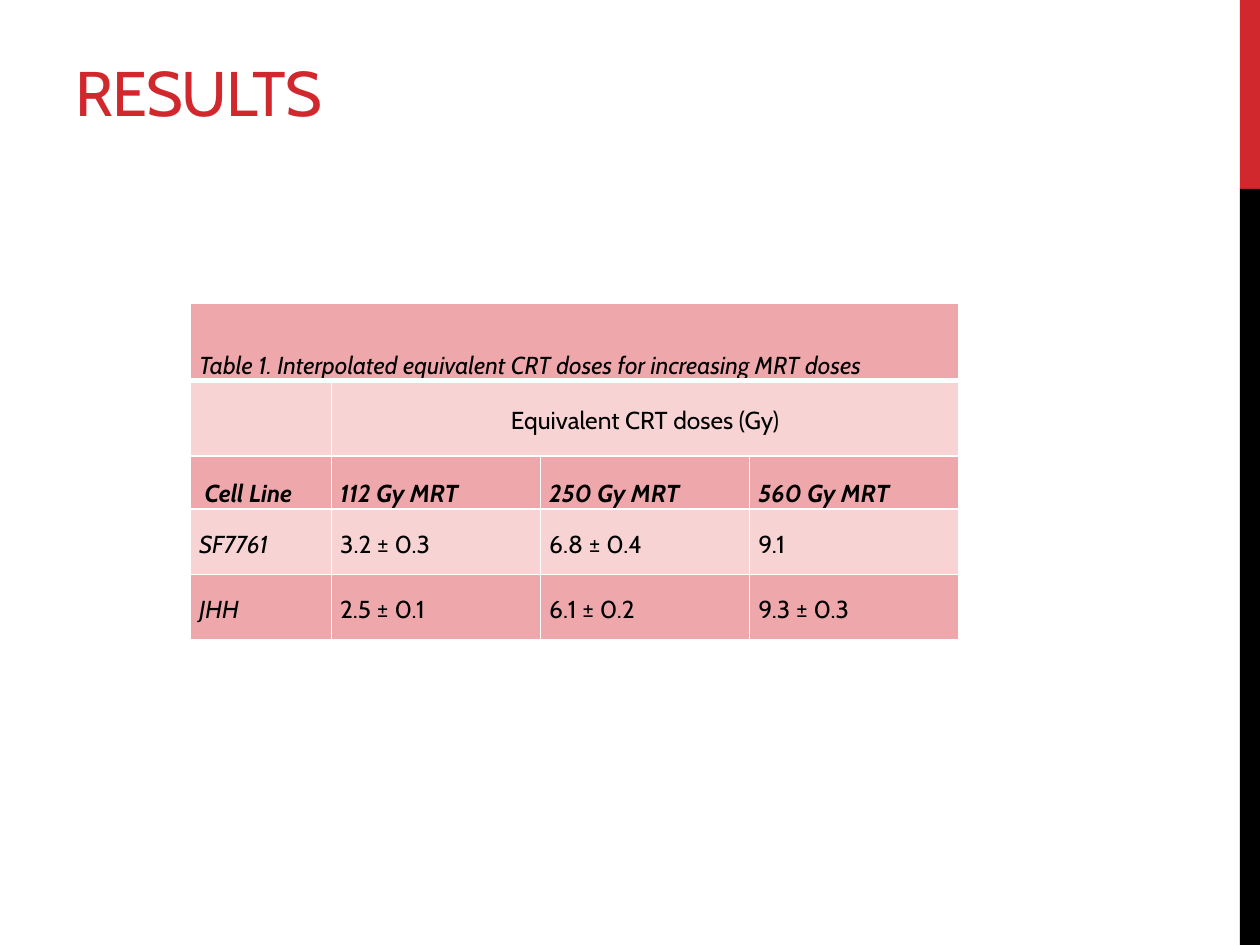
"""Build the results slide with its table of equivalent CRT doses."""
import pptx
import pptx.dml.color
import pptx.enum.shapes
import pptx.enum.text
import pptx.oxml
import pptx.oxml.ns
import pptx.util

Inches = pptx.util.Inches
Pt = pptx.util.Pt
ANCHOR = pptx.enum.text.MSO_ANCHOR
FONT = "Cabin"
COLORS = {
    "red": "D1282E",
    "black": "000000",
    "white": "FFFFFF",
    "dark_band": "EEA7AA",
    "light_band": "F7D3D4",
}
COL_WIDTHS = [1.12, 1.66, 1.66, 1.66]
ROW_HEIGHTS = [0.61, 0.6, 0.42, 0.52, 0.52]
CAPTION = "Table 1. Interpolated equivalent CRT doses for increasing MRT doses"
DOSES = [
    [" Cell Line", "112 Gy MRT", "250 Gy MRT", "560 Gy MRT"],
    ["SF7761", "3.2 ± 0.3", "6.8 ± 0.4", "9.1"],
    ["JHH", "2.5 ± 0.1", "6.1 ± 0.2", "9.3 ± 0.3"],
]


def rgb(name):
    return pptx.dml.color.RGBColor.from_string(COLORS[name])


def style_run(r, size, color, bold=False, italic=False):
    r.font.name = FONT
    r.font.size = Pt(size)
    r.font.color.rgb = rgb(color)
    r.font.bold = bold
    r.font.italic = italic


def add_bar(s, top, height, color):
    sp = s.shapes.add_shape(
        pptx.enum.shapes.MSO_SHAPE.RECTANGLE,
        Inches(9.84), Inches(top), Inches(0.16), Inches(height))
    sp.shadow.inherit = False
    sp.fill.solid()
    sp.fill.fore_color.rgb = rgb(color)
    sp.line.fill.background()


def add_title(s, text):
    sp = s.shapes.add_textbox(Inches(0.5), Inches(0.32), Inches(6.33), Inches(0.75))
    tf = sp.text_frame
    tf.text = text
    tf.word_wrap = True
    tf.vertical_anchor = ANCHOR.BOTTOM
    r = tf.paragraphs[0].runs[0]
    style_run(r, 36, "red")
    r.font._element.set("spc", "-60")


def style_cell(cell, row):
    tc_pr = cell._tc.get_or_add_tcPr()
    widths = {"L": 1, "R": 1, "T": 3 if row == 1 else 1, "B": 3 if row == 0 else 1}
    for side, width in widths.items():
        tc_pr.append(pptx.oxml.parse_xml(
            f'<a:ln{side} {pptx.oxml.ns.nsdecls("a")} w="{Pt(width)}"><a:solidFill>'
            f'<a:srgbClr val="{COLORS["white"]}"/></a:solidFill></a:ln{side}>'))
    cell.fill.solid()
    cell.fill.fore_color.rgb = rgb("light_band" if row % 2 else "dark_band")
    cell.margin_left = cell.margin_right = Inches(0.07)
    cell.margin_top = Inches(0.01)
    cell.margin_bottom = 0


def set_cell_text(cell, text, anchor, before=0, after=0, bold=False, italic=False):
    cell.vertical_anchor = anchor
    p = cell.text_frame.paragraphs[0]
    p.text = text
    p.line_spacing = 1.15
    p.space_before = Pt(before)
    p.space_after = Pt(after)
    style_run(p.runs[0], 14, "black", bold, italic)
    return p


def add_dose_table(s):
    frame = s.shapes.add_table(
        len(ROW_HEIGHTS), len(COL_WIDTHS), Inches(1.51), Inches(2.41),
        Inches(sum(COL_WIDTHS)), Inches(sum(ROW_HEIGHTS)))
    table = frame.table
    for col, width in zip(table.columns, COL_WIDTHS):
        col.width = Inches(width)
    for i, height in enumerate(ROW_HEIGHTS):
        table.rows[i].height = Inches(height)
        for j in range(len(COL_WIDTHS)):
            style_cell(table.cell(i, j), i)

    table.cell(0, 0).merge(table.cell(0, 3))
    table.cell(1, 1).merge(table.cell(1, 3))
    set_cell_text(table.cell(0, 0), CAPTION, ANCHOR.BOTTOM, before=12, italic=True)
    p = set_cell_text(table.cell(1, 1), "Equivalent CRT doses (Gy)", ANCHOR.MIDDLE)
    p.alignment = pptx.enum.text.PP_ALIGN.CENTER
    for i, row in enumerate(DOSES):
        header = i == 0
        for j, text in enumerate(row):
            set_cell_text(
                table.cell(i + 2, j), text, ANCHOR.BOTTOM if header else ANCHOR.MIDDLE,
                after=10, bold=header, italic=header or j == 0)


def main():
    prs = pptx.Presentation()
    prs.slide_width = Inches(10)
    prs.slide_height = Inches(7.5)
    s = prs.slides.add_slide(prs.slide_layouts[6])
    add_bar(s, 0, 1.5, "red")
    add_bar(s, 1.5, 6, "black")
    add_title(s, "RESULTS")
    add_dose_table(s)
    prs.save("out.pptx")


if __name__ == "__main__":
    main()
